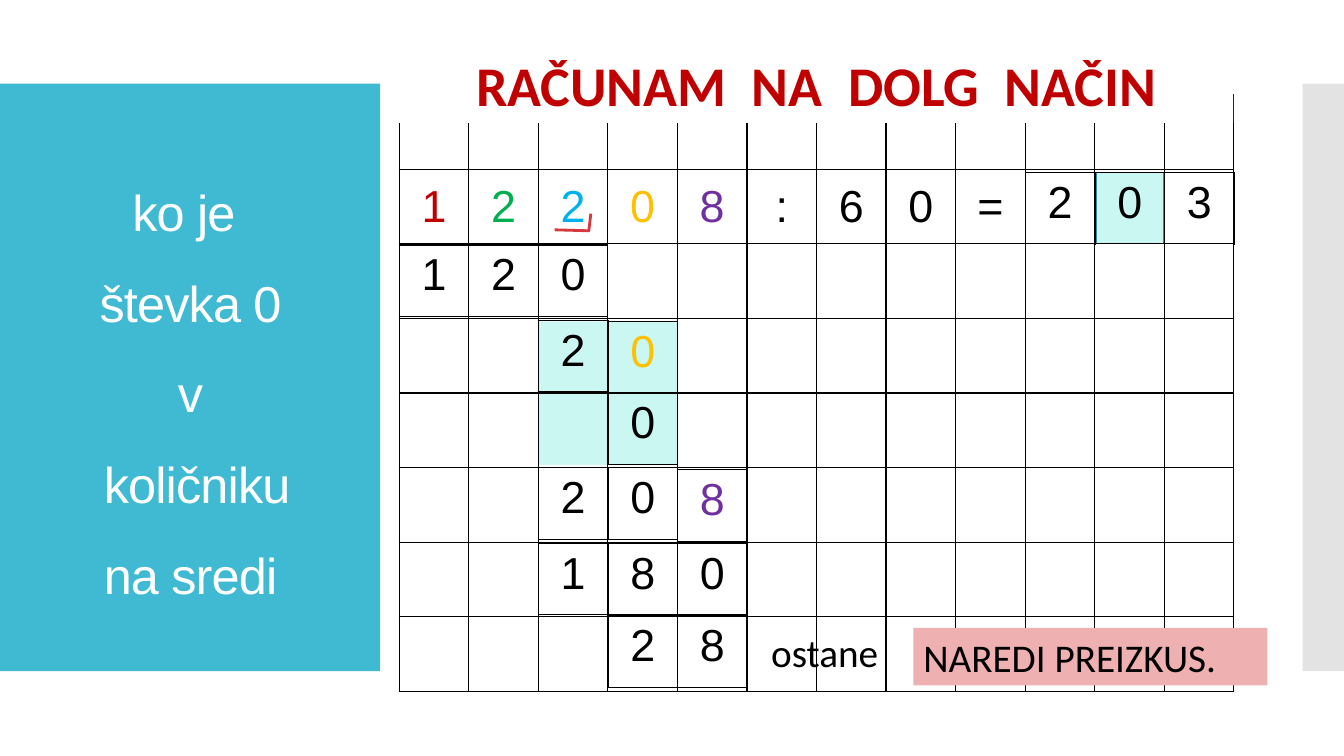
"""Builds the long-division slide with a zero in the middle of the quotient."""
import dataclasses

import pptx
import pptx.dml.color
import pptx.enum.shapes
import pptx.enum.text
import pptx.oxml
import pptx.oxml.ns
import pptx.util

PX = 9144
RECTANGLE = pptx.enum.shapes.MSO_SHAPE.RECTANGLE
ALIGN = pptx.enum.text.PP_ALIGN
ANCHOR = pptx.enum.text.MSO_ANCHOR
NAMESPACE = pptx.oxml.ns.nsdecls("a")
qn = pptx.oxml.ns.qn


@dataclasses.dataclass(frozen=True)
class Theme:
    """Colours, fonts and type sizes of the slide."""
    panel: str = "40BAD2"
    side: str = "C8C8C8"
    highlight: str = "CAF7F1"
    outline: str = "2F8A9B"
    bracket: str = "D5393D"
    task: str = "EEB0B1"
    white: str = "FFFFFF"
    ink: str = "000000"
    red: str = "C00000"
    green: str = "00B050"
    blue: str = "00B0F0"
    yellow: str = "FFC000"
    purple: str = "7030A0"
    digit_font: str = "Arial"
    label_font: str = "Calibri"
    title_size: int = 36
    digit_size: int = 32
    heading_size: int = 40
    label_size: int = 28


THEME = Theme()
CELL_W, CELL_H, STEP_H = 69, 74, 71
COLUMNS, ROWS = 12, 8
DIVIDEND = tuple(zip("12208:60=", (THEME.red, THEME.green, THEME.blue, THEME.yellow,
                                   THEME.purple) + (THEME.ink,) * 4))
STEPS = (
    (6, 2, 1, "180", THEME.ink),
    (2, 0, 1, "120", THEME.ink),
    (1, 10, 3, "0", THEME.ink),
    (1, 9, 3, "2", THEME.ink),
    (3, 3, 3, "0", THEME.yellow),
    (3, 2, 2, "2", THEME.ink),
    (1, 11, 3, "3", THEME.ink),
    (5, 4, 2, "8", THEME.purple),
    (4, 3, 0, "0", THEME.ink),
    (7, 3, -1, "28", THEME.ink),
    (5, 2, 0, "20", THEME.ink),
)


def emu(box):
    """Turn px lengths into EMU."""
    return [length * PX for length in box]


def rgb(colour):
    """Read a colour from its hex value."""
    return pptx.dml.color.RGBColor.from_string(colour)


def set_alpha(element, percent):
    """Make the solid colours below an element see-through."""
    for colour in element.iter(qn("a:srgbClr")):
        colour.append(pptx.oxml.parse_xml(
            f'<a:alpha {NAMESPACE} val="{percent * 1000}"/>'))


def style_text(paragraph, font, size, colour, align=ALIGN.LEFT, bold=False):
    """Set the font and alignment of one paragraph."""
    paragraph.alignment = align
    paragraph.font.name = font
    paragraph.font.size = pptx.util.Pt(size)
    paragraph.font.bold = bold
    paragraph.font.color.rgb = rgb(colour)


def add_block(slide, box, colour, outline=None):
    """Add a flat rectangle with an optional outline."""
    block = slide.shapes.add_shape(RECTANGLE, *emu(box))
    block.shadow.inherit = False
    block.fill.solid()
    block.fill.fore_color.rgb = rgb(colour)
    if outline:
        block.line.color.rgb = rgb(outline)
        block.line.width = pptx.util.Pt(0.85)
    else:
        block.line.fill.background()
    return block


def write_label(shape, text, size, colour, align=ALIGN.LEFT, bold=False):
    """Write one line of label text at the top of a shape."""
    frame = shape.text_frame
    frame.word_wrap = True
    frame.vertical_anchor = ANCHOR.TOP
    frame.text = text
    style_text(frame.paragraphs[0], THEME.label_font, size, colour, align, bold)


def add_title_panel(slide, box):
    """Place the coloured panel and the slide title inside it."""
    left, top, width, height = box
    panel = add_block(slide, box, THEME.panel)
    title = slide.shapes.title
    panel.element.addnext(title.element)
    title.left, title.top, title.width, title.height = emu(
        (left + 28, top + 40, width - 55, height - 80))
    frame = title.text_frame
    frame.text = "ko je \vštevka 0\vv\v količniku\vna sredi"
    frame.word_wrap = True
    frame.auto_size = pptx.enum.text.MSO_AUTO_SIZE.NONE
    frame.vertical_anchor = ANCHOR.MIDDLE
    lines = frame.paragraphs[0]
    lines.line_spacing = 1.5
    style_text(lines, THEME.digit_font, THEME.title_size, THEME.white, ALIGN.CENTER)
    for properties in title.element.iter(qn("a:defRPr")):
        properties.set("spc", "-60")


def add_squares(slide, left, top, rows, columns, height):
    """Add a table of equal, unfilled squares with thin borders."""
    box = emu((left, top, columns * CELL_W, rows * height))
    frame = slide.shapes.add_table(rows, columns, *box)
    squares = frame.table
    squares.first_row = squares.horz_banding = False
    for cell in squares.iter_cells():
        cell.fill.background()
    for properties in frame.element.iter(qn("a:tcPr")):
        for position, side in enumerate(("lnL", "lnR", "lnT", "lnB")):
            properties.insert(position, pptx.oxml.parse_xml(
                f'<a:{side} {NAMESPACE} w="12700"><a:solidFill>'
                f'<a:srgbClr val="{THEME.ink}"/></a:solidFill></a:{side}>'))
    return squares


def write_digit(cell, digit, colour):
    """Write one centred digit or sign."""
    cell.text = digit
    style_text(cell.text_frame.paragraphs[0], THEME.digit_font, THEME.digit_size,
               colour, ALIGN.CENTER)


def add_bracket(slide, left, top):
    """Mark the first partial dividend with two strokes."""
    for x1, y1, x2, y2 in ((0, 16, 35, 17), (36, 0, 34, 17)):
        stroke = slide.shapes.add_connector(
            pptx.enum.shapes.MSO_CONNECTOR.STRAIGHT,
            *emu((left + x1, top + y1, left + x2, top + y2)))
        stroke.line.color.rgb = rgb(THEME.bracket)
        stroke.line.width = pptx.util.Pt(2)
        stroke.element.spPr.append(pptx.oxml.parse_xml(f'<a:effectLst {NAMESPACE}/>'))


def add_division(slide, left, top):
    """Place the squared grid, the division and its steps."""
    add_block(slide, (left + 691, top + 77, 67, STEP_H), THEME.highlight, THEME.outline)
    remainder = add_block(slide, (left + 2 * CELL_W, top + 225, 2 * CELL_W, 2 * STEP_H),
                          THEME.highlight, THEME.outline)
    set_alpha(next(remainder.element.iter(qn("a:ln"))), 3)
    grid = add_squares(slide, left, top, ROWS, COLUMNS, CELL_H)
    for column, (sign, colour) in enumerate(DIVIDEND):
        cell = grid.cell(1, column)
        cell.vertical_anchor = ANCHOR.MIDDLE
        write_digit(cell, sign, colour)
    for row, column, drop, digits, colour in STEPS:
        step = add_squares(slide, left + column * CELL_W, top + row * CELL_H + drop,
                           1, len(digits), STEP_H)
        for place, digit in enumerate(digits):
            write_digit(step.cell(0, place), digit, colour)
    add_bracket(slide, left + 154, top + 118)


def add_labels(slide, left, top):
    """Place the heading, the remainder note and the task."""
    heading = add_block(slide, (left, top, 827, 77), THEME.white)
    write_label(heading, "RAČUNAM  NA  DOLG  NAČIN", THEME.heading_size, THEME.red,
                ALIGN.CENTER, True)
    note = slide.shapes.add_textbox(*emu((left + 359, top + 573, 151, 57)))
    write_label(note, "ostane", THEME.label_size, THEME.ink)
    task = add_block(slide, (left + 510, top + 578, 351, 57), THEME.task)
    write_label(task, "NAREDI PREIZKUS.", THEME.label_size, THEME.ink)


def main():
    """Build the slide and save it."""
    deck = pptx.Presentation()
    deck.slide_width, deck.slide_height = emu((1333, 750))
    slide = deck.slides.add_slide(deck.slide_layouts[5])
    add_title_panel(slide, (0, 83, 377, 583))
    side = add_block(slide, (1292, 83, 41, 583), THEME.side)
    set_alpha(side.element.spPr, 50)
    add_division(slide, 396, 94)
    add_labels(slide, 396, 45)
    deck.save("out.pptx")


if __name__ == "__main__":
    main()
